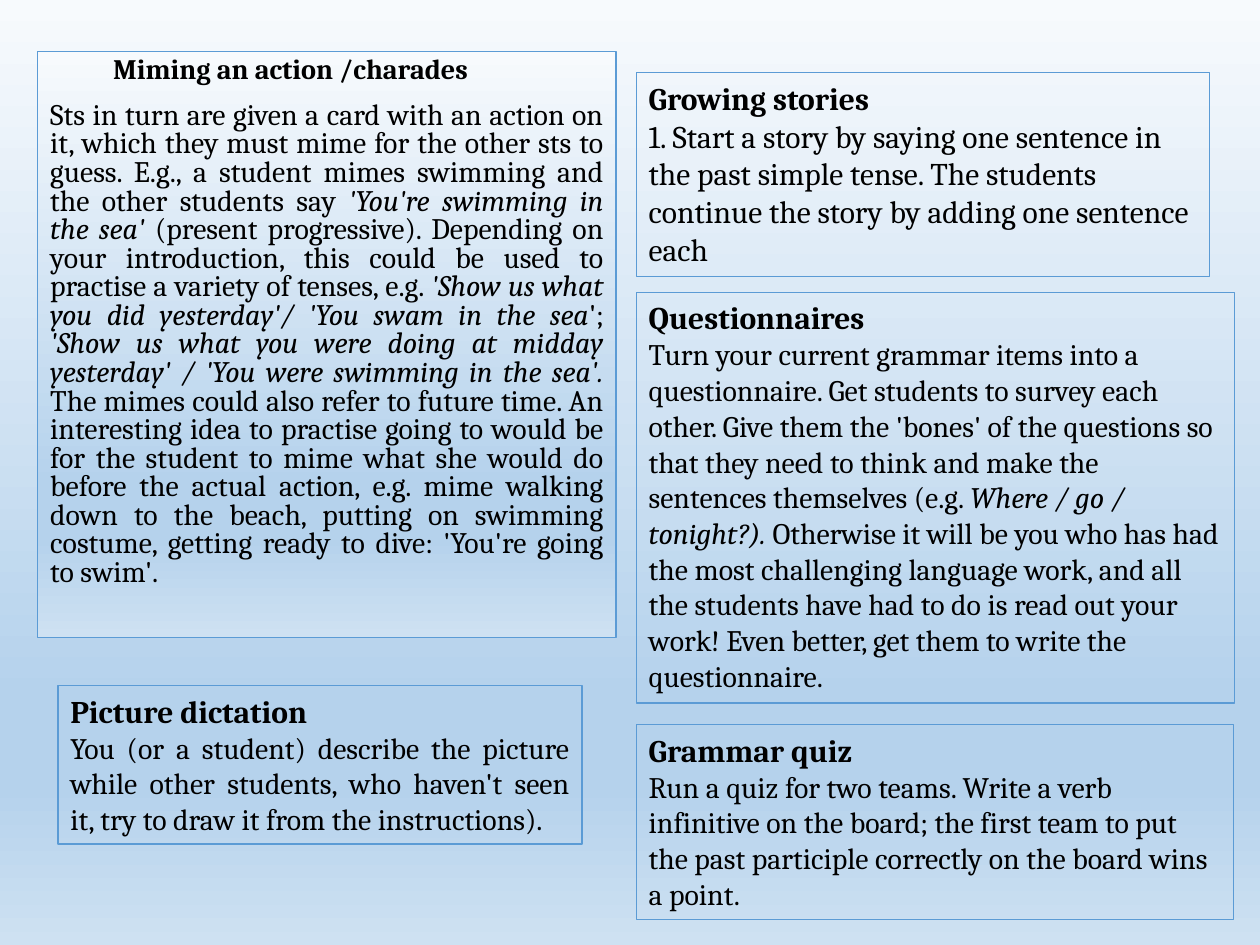
from pptx import Presentation
from pptx import util as u
from pptx.dml.color import RGBColor
from pptx.enum import text
from pptx.oxml import ns
from lxml import etree

COLORS = {"ink": "000000", "edge": "5B9BD5", "pale": "F7FAFD", "sky": "B5D2EC", "mist": "CEE1F2"}
STOPS = [(0, "pale"), (74, "sky"), (83, "sky"), (100, "mist")]
JUST = text.PP_ALIGN.JUSTIFY


class Deck:
    """Hold the style and the current slide."""

    def __init__(self, wide, high):
        self.font = "Cambria"
        self.prs = Presentation()
        self.prs.slide_width, self.prs.slide_height = u.Pt(wide), u.Pt(high)
        self.slide = self.prs.slides.add_slide(self.prs.slide_layouts[6])

    def color(self, name):
        return RGBColor.from_string(COLORS[name])

    def shade(self, fill, node):
        fill.gradient()
        fill.gradient_angle = 270
        stops = next(node.iter(ns.qn("a:gsLst")))
        for old in list(stops):
            stops.remove(old)
        for pos, name in STOPS:
            stop = etree.SubElement(stops, ns.qn("a:gs"), pos=str(pos * 1000))
            etree.SubElement(stop, ns.qn("a:srgbClr"), val=COLORS[name])

    def back(self):
        self.shade(self.slide.background.fill, self.slide.element)

    def box(self, left, top, wide, high, grow=True):
        box = self.slide.shapes.add_textbox(*map(u.Pt, (left, top, wide, high)))
        box.line.color.rgb = self.color("edge")
        box.line.width = u.Pt(0.75)
        frame = box.text_frame
        frame.word_wrap = True
        kinds = text.MSO_AUTO_SIZE
        frame.auto_size = kinds.SHAPE_TO_FIT_TEXT if grow else kinds.NONE
        return box

    def style(self, para, size, bold=False):
        para.font.name = self.font
        para.font.size = u.Pt(size)
        para.font.bold = bold
        para.font.color.rgb = self.color("ink")

    def fill(self, box, title, body, size=17, head=18, align=None):
        first = box.text_frame.paragraphs[0]
        first.text = title
        self.style(first, head, True)
        para = box.text_frame.add_paragraph()
        para.alignment = align
        self.style(para, size)
        for i, part in enumerate(body.split("*")):
            run = para.add_run()
            run.text = part
            if i % 2:
                run.font.italic = True
        return first, para

    def card(self, place, title, body, **look):
        self.fill(self.box(*place), title, body, **look)

    def panel(self, place, title, body):
        box = self.box(*place, grow=False)
        self.shade(box.fill, box.element)
        paras = self.fill(box, title, body, head=16.1, align=JUST)
        for para, gap in zip(paras, (5, 10)):
            para.line_spacing = 0.8
            para.space_before = u.Pt(gap)
        paras[0].element.get_or_add_pPr().set("marL", str(u.Pt(36))) if hasattr(paras[0], "element") \
            else paras[0]._p.get_or_add_pPr().set("marL", str(u.Pt(36)))


def main():
    deck = Deck(720, 540)
    deck.back()
    deck.panel(
        (21.6, 29.5, 330.5, 334.8), "Miming an action /charades",
        "Sts in turn are given a card with an action on it, which they must mime for the other sts to guess. "
        "E.g., a student mimes swimming and the other students say *'You're swimming in the sea'* (present "
        "progressive). Depending on your introduction, this could be used to practise a variety of tenses, e.g. "
        "*'Show us what you did yesterday'/ 'You swam in the sea*'; *'Show us what you were doing at midday "
        "yesterday' / 'You were swimming in the sea'. *The mimes could also refer to future time. An interesting "
        "idea to practise going to would be for the student to mime what she would do before the actual action, "
        "e.g. mime walking down to the beach, putting on swimming costume, getting ready to dive: "
        "'You're going to swim'.")
    right = 363.6
    deck.card(
        (right, 41.5, 327.6, 116.6), "Growing stories",
        "1. Start a story by saying one sentence in the past simple tense. The students continue the story by "
        "adding one sentence each", size=18)
    deck.card(
        (right, 167, 342, 234.7), "Questionnaires",
        "Turn your current grammar items into a questionnaire. Get students to survey each other. Give them the "
        "'bones' of the questions so that they need to think and make the sentences themselves (e.g. *Where / go / "
        "tonight?). *Otherwise it will be you who has had the most challenging language work, and all the students "
        "have had to do is read out your work! Even better, get them to write the questionnaire.")
    deck.card(
        (33.1, 391.7, 299.5, 90.7), "Picture dictation",
        "You (or a student) describe the picture while other students, who haven't seen it, try to draw it from "
        "the instructions).", align=JUST)
    deck.card(
        (right, 414, 341.3, 111.6), "Grammar quiz",
        "Run a quiz for two teams. Write a verb infinitive on the board; the first team to put the past participle "
        "correctly on the board wins a point.")
    deck.prs.save("out.pptx")


if __name__ == "__main__":
    main()
